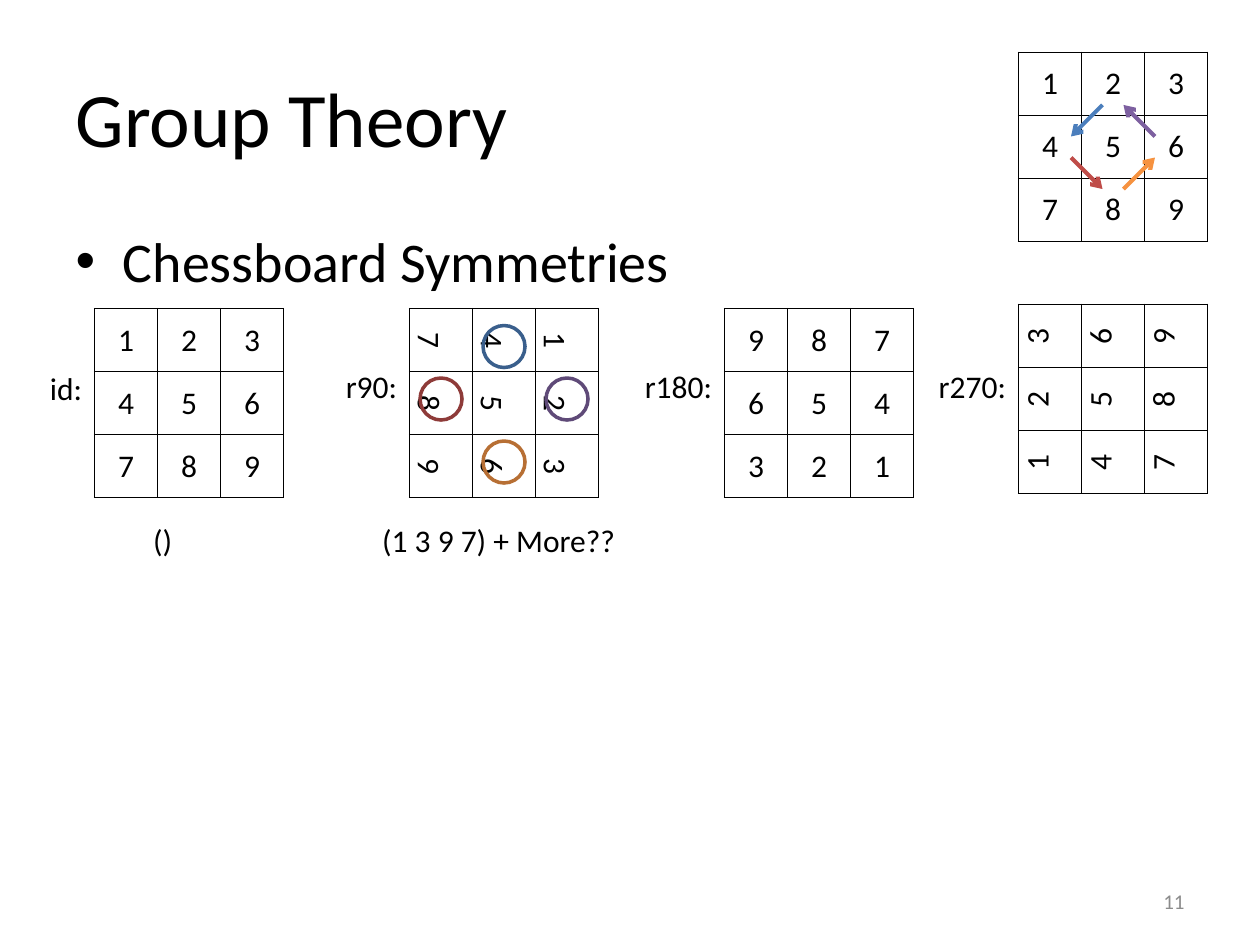
"""Build the Group Theory slide: chessboard rotations on a 120 by 90 grid."""
from lxml.etree import SubElement
from pptx import Presentation
from pptx.dml.color import RGBColor
from pptx.enum.shapes import MSO_CONNECTOR as CONN, MSO_SHAPE as SHAPE
from pptx.enum.text import MSO_ANCHOR as ANCHOR, PP_ALIGN as ALIGN
from pptx.oxml import parse_xml
from pptx.oxml.ns import nsdecls, qn
from pptx.util import Inches, Pt

prs = Presentation()
prs.slide_width, prs.slide_height = Inches(10), Inches(7.5)
U = prs.slide_width / 120
s = prs.slides.add_slide(prs.slide_layouts[1])
rgb = RGBColor.from_string


def grid(*cells):
    return [round(c * U) for c in cells]


def write(tf, text, size=18, color="000000", align=ALIGN.LEFT, anchor=None):
    for name, value in {"word_wrap": True, "vertical_anchor": anchor}.items():
        if hasattr(tf, name):
            setattr(tf, name, value)
    p = tf.paragraphs[0]
    p.alignment = align
    r = p.add_run()
    r.text = text
    for name, value in {"size": Pt(size), "name": "Calibri"}.items():
        setattr(r.font, name, value)
    r.font.color.rgb = rgb(color)


title, body = s.placeholders
for sp, box, text, size, anchor in [
    (title, (6, 3.6, 108, 15), "Group Theory", 44, ANCHOR.MIDDLE),
    (body, (6, 21, 108, 59.4), "Chessboard Symmetries", 32, ANCHOR.TOP),
]:
    sp.left, sp.top, sp.width, sp.height = grid(*box)
    write(sp.text_frame, text, size, anchor=anchor)

boards = [
    (9, 29.4, "123456789", None),
    (39, 29.4, "741852963", "vert"),
    (69, 29.4, "987654321", None),
    (97, 29, "369258147", "vert270"),
    (97, 5, "123456789", None),
]
cell_format = dict.fromkeys(
    ["margin_left", "margin_top", "margin_right", "margin_bottom"], 0
) | {"vertical_anchor": ANCHOR.MIDDLE}
for left, top, digits, turn in boards:
    table = s.shapes.add_table(3, 3, *grid(left, top, 18, 18)).table
    table.first_row = table.horz_banding = False
    for cell, digit in zip(table.iter_cells(), digits):
        write(cell.text_frame, digit, align=ALIGN.CENTER)
        for name, value in cell_format.items():
            setattr(cell, name, value)
        cell.fill.background()
        tcPr = cell._tc.get_or_add_tcPr()
        if turn:
            tcPr.set("vert", turn)
        for i, side in enumerate("LRTB"):
            tcPr.insert(i, parse_xml(
                f'<a:ln{side} {nsdecls("a")} w="12700"><a:solidFill>'
                f'<a:srgbClr val="000000"/></a:solidFill></a:ln{side}>'))

labels = [
    ((-6, 34.6, 15, 4.8), "id:", ALIGN.RIGHT),
    ((22, 34.4, 17, 4.8), "r90:", ALIGN.RIGHT),
    ((52, 34.4, 17, 4.8), "r180:", ALIGN.RIGHT),
    ((80, 34.4, 17, 4.8), "r270:", ALIGN.RIGHT),
    ((2, 49, 27, 5), "()", ALIGN.CENTER),
    ((34, 49, 27, 5), "(1 3 9 7) + More??", ALIGN.CENTER),
]
for box, text, align in labels:
    write(s.shapes.add_textbox(*grid(*box)).text_frame, text, align=align)
number = s.shapes.add_textbox(*grid(86, 83.4, 28, 4.8))
write(number.text_frame, "11", 12, "8C8C8C", ALIGN.RIGHT, ANCHOR.MIDDLE)

cycle = [
    ((105, 10, 102, 13), "4B7EBC", (46, 31), "3A5F8C"),
    ((102, 15, 105, 18), "BF4C48", (40, 36), "8E3B39"),
    ((107, 18, 110, 15), "F69240", (46, 42), "B76F34"),
    ((110, 13, 107, 10), "7D60A0", (52, 36), "5F4A78"),
]
for ends, arrow_color, corner, ring_color in cycle:
    arrow = s.shapes.add_connector(CONN.STRAIGHT, *grid(*ends))
    arrow.line.color.rgb, arrow.line.width = rgb(arrow_color), Pt(2.25)
    SubElement(arrow.line._get_or_add_ln(), qn("a:tailEnd"), type="arrow")
    SubElement(arrow._element.spPr, qn("a:effectLst"))

    ring = s.shapes.add_shape(SHAPE.OVAL, *grid(*corner, 4, 4))
    ring.shadow.inherit = False
    ring.fill.background()
    ring.line.color.rgb, ring.line.width = rgb(ring_color), Pt(2)

prs.save("out.pptx")
